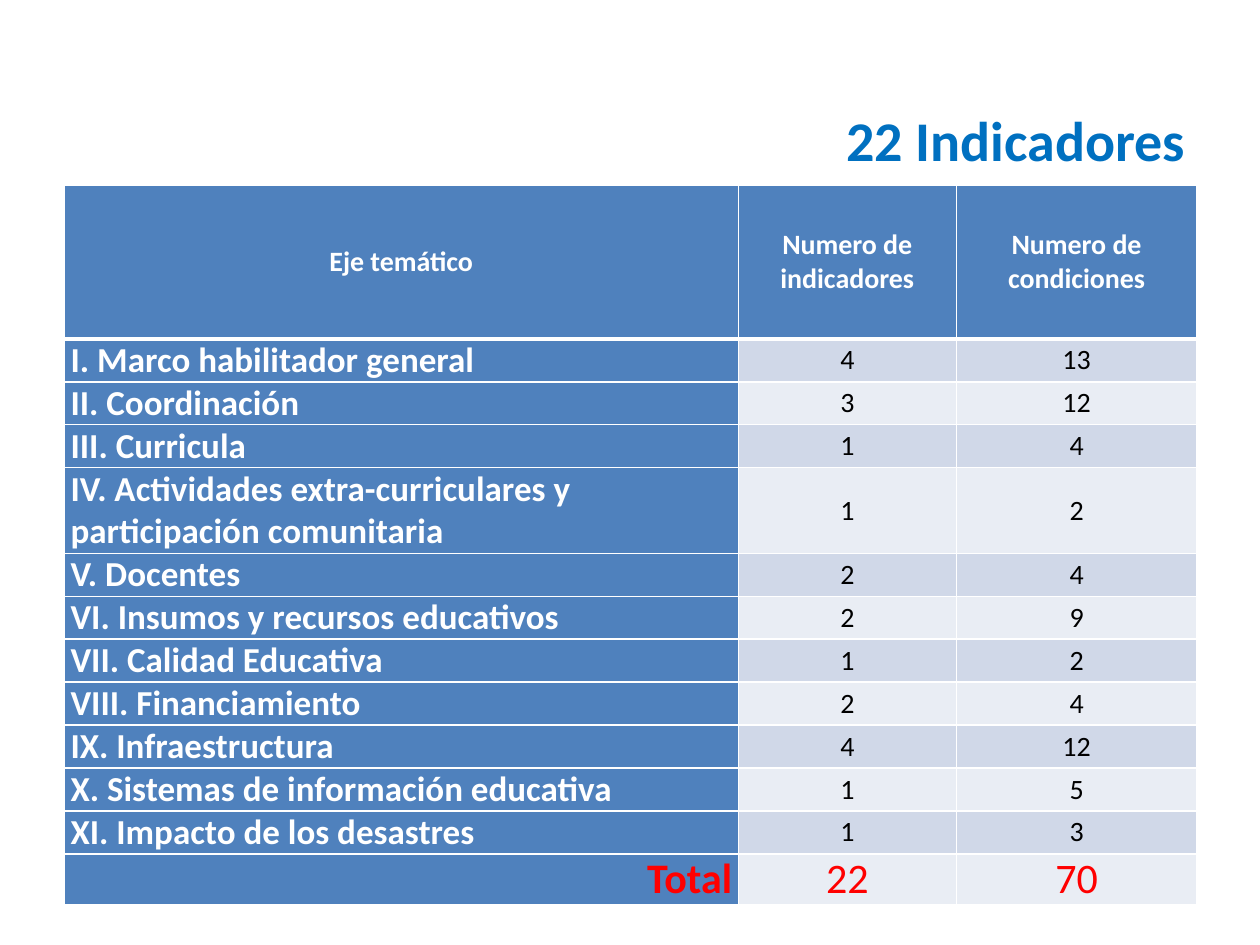
from lxml import etree
from pptx import Presentation
from pptx.dml.color import RGBColor
from pptx.enum.text import MSO_ANCHOR, PP_ALIGN
from pptx.oxml.ns import qn
from pptx.util import Inches, Pt

LEFT, CENTER, RIGHT = PP_ALIGN.LEFT, PP_ALIGN.CENTER, PP_ALIGN.RIGHT
MIDDLE, BOTTOM = MSO_ANCHOR.MIDDLE, MSO_ANCHOR.BOTTOM
BLUE, WHITE, BLACK, RED = "4F81BD", "FFFFFF", "000000", "FF0000"
BANDS = ["E9EDF4", "D0D8E8"]


def write(frame, text, size, color, bold, align):
    frame.text = text
    paragraph = frame.paragraphs[0]
    paragraph.alignment = align
    font = paragraph.runs[0].font
    font.name, font.size, font.bold = "Calibri", Pt(size), bold
    font.color.rgb = RGBColor.from_string(color)


def add_borders(cell, top, bottom):
    properties = cell._tc.get_or_add_tcPr()
    for side, width in (("L", 1), ("R", 1), ("T", top), ("B", bottom)):
        line = etree.SubElement(properties, qn(f"a:ln{side}"), w=str(Pt(width)))
        fill = etree.SubElement(line, qn("a:solidFill"))
        etree.SubElement(fill, qn("a:srgbClr"), val=WHITE)


prs = Presentation()
prs.slide_width, prs.slide_height = Inches(10), Inches(7.5)
slide = prs.slides.add_slide(prs.slide_layouts[5])

# Title
title = slide.shapes.title
title.left, title.top = Inches(3.43), Inches(0.72)
title.width, title.height = Inches(6.08), Inches(0.77)
title.text_frame.vertical_anchor = MIDDLE
write(title.text_frame, "22 Indicadores", 32, "0070C0", True, RIGHT)

# Table content: axis, indicators, conditions
rows = [
    ("Eje temático", "Numero de indicadores", "Numero de condiciones"),
    ("I. Marco habilitador general", 4, 13),
    ("II. Coordinación", 3, 12),
    ("III. Curricula", 1, 4),
    ("IV. Actividades extra-curriculares y participación comunitaria", 1, 2),
    ("V. Docentes", 2, 4),
    ("VI. Insumos y recursos educativos", 2, 9),
    ("VII. Calidad Educativa", 1, 2),
    ("VIII. Financiamiento", 2, 4),
    ("IX. Infraestructura", 4, 12),
    ("X. Sistemas de información educativa", 1, 5),
    ("XI. Impacto de los desastres", 1, 3),
    ("Total", 22, 70),
]
header, two_line, total = 0, 4, len(rows) - 1
row_heights = {header: 1.22, two_line: 0.68, total: 0.4}

indicators = slide.shapes.add_table(
    len(rows), 3, Inches(0.51), Inches(1.47), Inches(9), Inches(5.62)).table
for column, width in zip(indicators.columns, (5.35, 1.73, 1.91)):
    column.width = Inches(width)

# Cells
for r, values in enumerate(rows):
    indicators.rows[r].height = Inches(row_heights.get(r, 0.34))
    for c, value in enumerate(values):
        cell = indicators.cell(r, c)
        is_axis = c == 0
        size, color, align, anchor = 16, BLACK, CENTER, MIDDLE
        if r == header:
            color = WHITE
        elif r == total:
            size, color = 24, RED
            align = RIGHT if is_axis else CENTER
        elif is_axis:
            size, color, align, anchor = 20, WHITE, LEFT, BOTTOM
        write(cell.text_frame, str(value), size, color, is_axis or r == header, align)
        cell.vertical_anchor = anchor
        cell.margin_left = cell.margin_right = Inches(0.05)
        cell.margin_top = cell.margin_bottom = 0
        add_borders(cell, top=3 if r == header + 1 else 1, bottom=3 if r == header else 1)
        cell.fill.solid()
        cell.fill.fore_color.rgb = RGBColor.from_string(
            BLUE if is_axis or r == header else BANDS[r % 2])

prs.save("out.pptx")
